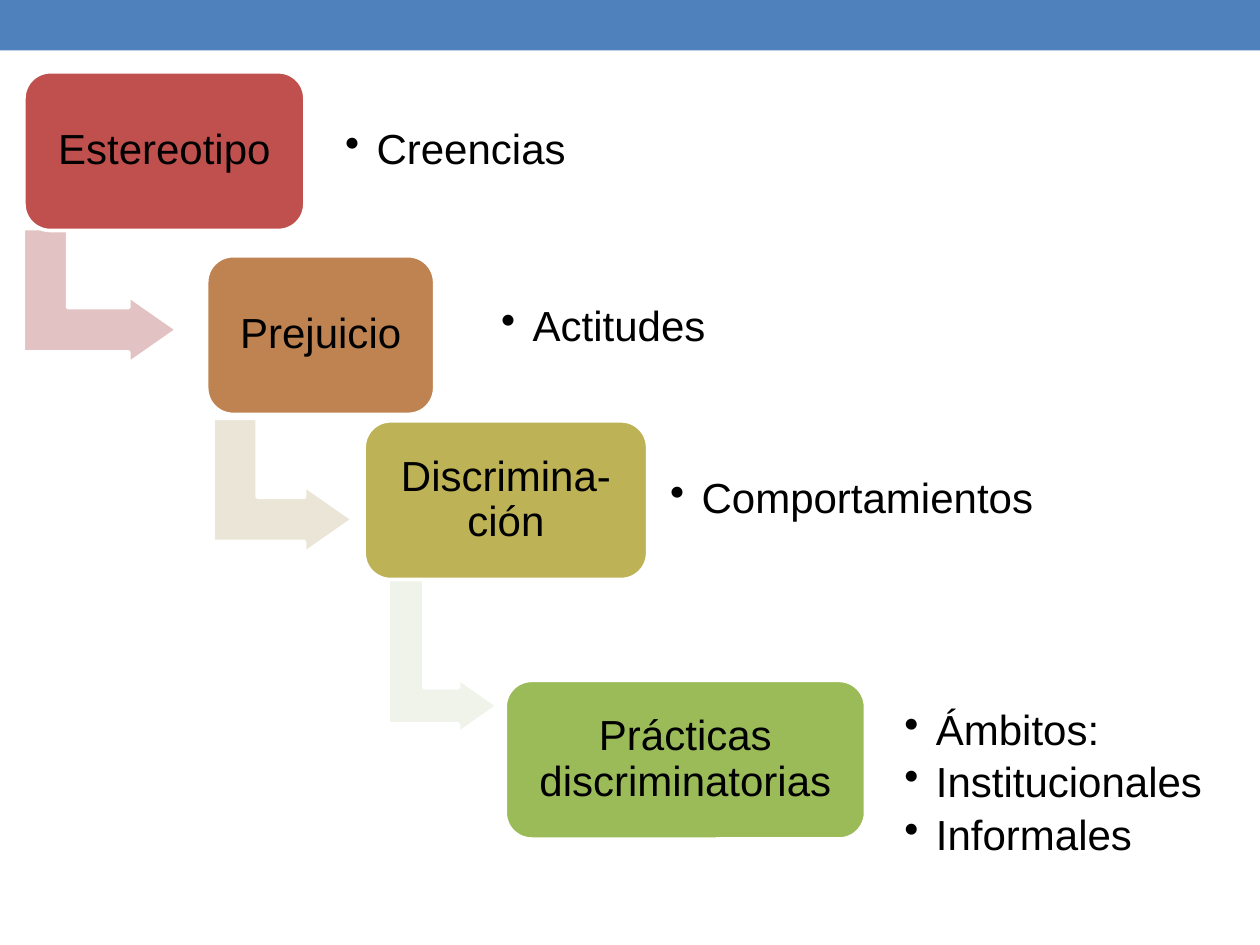
import dataclasses

import lxml.etree
import pptx
import pptx.dml.color
import pptx.enum.shapes
import pptx.enum.text
import pptx.oxml.ns
import pptx.util

Inches = pptx.util.Inches
Pt = pptx.util.Pt
SHAPES = pptx.enum.shapes.MSO_SHAPE
ALIGN = pptx.enum.text.PP_ALIGN


@dataclasses.dataclass(frozen=True)
class Theme:
    font: str = "Arial"
    size: int = 24
    text: str = "000000"
    band: str = "4F81BD"
    outline: str = "FFFFFF"
    outline_width: float = 2.08
    steps: tuple = ("C0504D", "BE8351", "BDB255", "9BBB59")
    arrows: tuple = ("E2C2C2", "EAE5D6", "EFF3EA")


theme = Theme()


def add_block(kind, place, fill, line=None):
    block = slide.shapes.add_shape(kind, *map(Inches, place))
    block.shadow.inherit = False
    block.fill.solid()
    block.fill.fore_color.rgb = pptx.dml.color.RGBColor.from_string(fill)
    if line:
        block.line.color.rgb = pptx.dml.color.RGBColor.from_string(line)
        block.line.width = Pt(theme.outline_width)
    else:
        block.line.fill.background()
    return block


def write(shape, lines, align=ALIGN.LEFT, space_after=0, bullet=None):
    frame = shape.text_frame
    frame.word_wrap = True
    frame.vertical_anchor = pptx.enum.text.MSO_ANCHOR.MIDDLE
    frame.margin_left = frame.margin_right = Inches(0.1)
    frame.margin_top = frame.margin_bottom = Inches(0.1)
    for index, line in enumerate(lines):
        para = frame.add_paragraph() if index else frame.paragraphs[0]
        para.alignment = align
        para.line_spacing = 0.9
        para.space_after = Pt(space_after)
        if bullet:
            para.level = 1
            properties = para._p.get_or_add_pPr()
            properties.set("marL", str(Inches(0.25)))
            properties.set("indent", str(-Inches(0.25)))
            mark = lxml.etree.SubElement(properties, pptx.oxml.ns.qn("a:buChar"))
            mark.set("char", bullet)
        span = para.add_run()
        span.text = line
        span.font.name = theme.font
        span.font.size = Pt(theme.size)
        span.font.color.rgb = pptx.dml.color.RGBColor.from_string(theme.text)


deck = pptx.Presentation()
deck.slide_width = Inches(10)
deck.slide_height = Inches(7.5)
slide = deck.slides.add_slide(deck.slide_layouts[6])

add_block(SHAPES.RECTANGLE, (0, 0, 10, 0.4), theme.band)

# Each step: label, left, top and width of its box, place of its notes, notes
step_height = 1.26
steps = [
    ("Estereotipo", (0.19, 0.57, 2.23), (2.64, 0.69, 2, 1.02), ["Creencias"]),
    ("Prejuicio", (1.64, 2.03, 1.81), (3.88, 2.09, 1.94, 1.02), ["Actitudes"]),
    ("Discrimina-ción", (2.89, 3.34, 2.25), (5.22, 3.46, 3.44, 1.02),
     ["Comportamientos"]),
    ("Prácticas discriminatorias", (4.01, 5.4, 2.86), (7.08, 5.01, 2.77, 2.43),
     ["Ámbitos:", "Institucionales", "Informales"]),
]
# Places before the quarter turn that points each arrow to the right
arrow_places = [
    (0.26, 1.74, 1.07, 1.22),
    (1.71, 3.3, 1.07, 1.11),
    (2.83, 4.7, 1.37, 0.87),
]

for index, (label, box_place, notes_place, notes) in enumerate(steps):
    if index < len(arrow_places):
        arrow = add_block(SHAPES.BENT_UP_ARROW, arrow_places[index],
                          theme.arrows[index], theme.outline)
        arrow.rotation = 90
        for position, value in enumerate((0.328, 0.25, 0.358)):
            arrow.adjustments[position] = value

    box = add_block(SHAPES.ROUNDED_RECTANGLE, (*box_place, step_height),
                    theme.steps[index], theme.outline)
    box.adjustments[0] = 0.167
    write(box, [label], align=ALIGN.CENTER, space_after=8)

    notes_box = slide.shapes.add_textbox(*map(Inches, notes_place))
    write(notes_box, notes, space_after=4, bullet="•")

deck.save("out.pptx")
